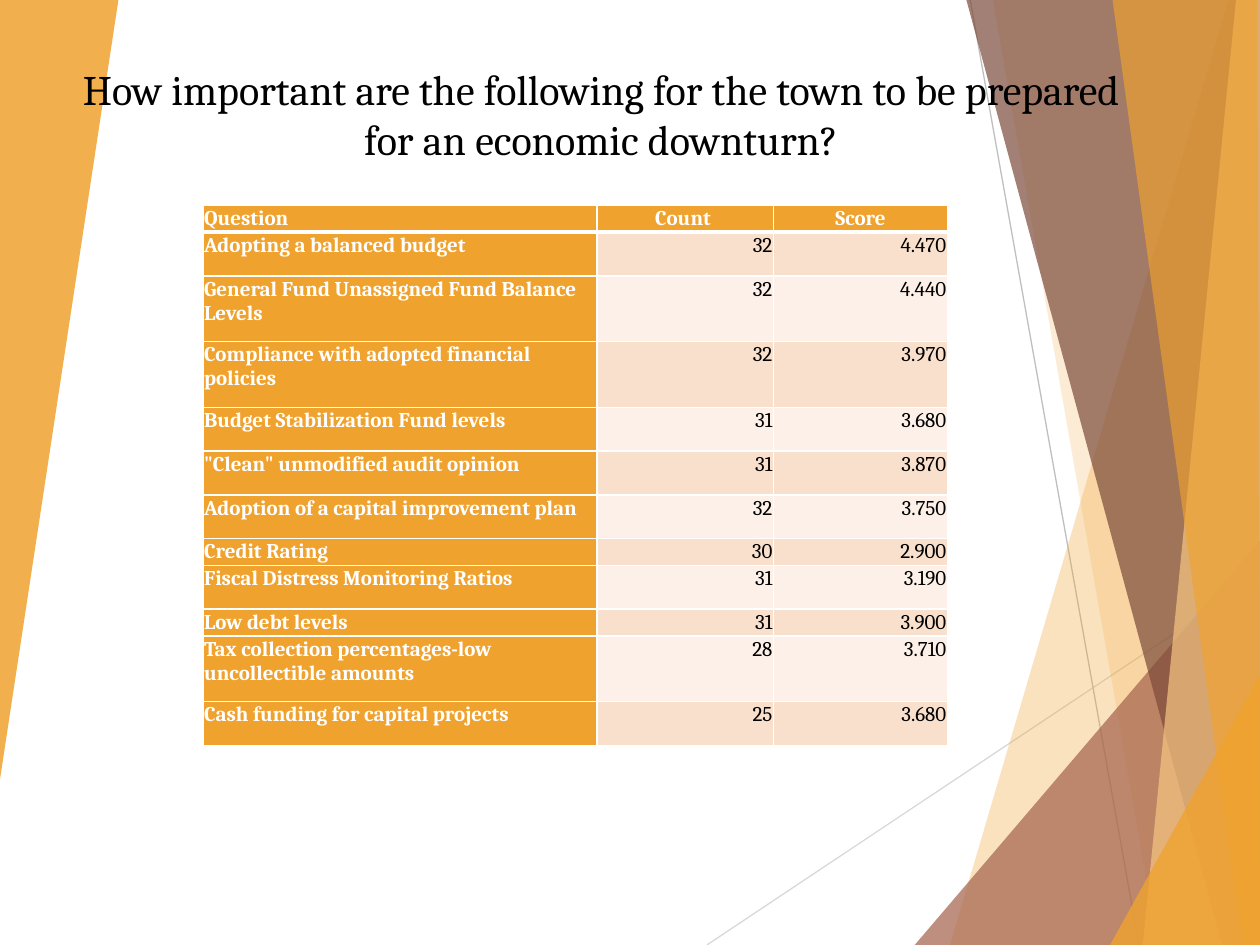
"""Build the survey slide on readiness for an economic downturn."""
import dataclasses
import typing

import lxml.etree
import pptx
import pptx.dml.color
import pptx.enum.shapes
import pptx.enum.text
import pptx.oxml.ns
import pptx.util

Point = typing.Tuple[float, float]
Align = pptx.enum.text.PP_ALIGN
Anchor = pptx.enum.text.MSO_ANCHOR
Kind = pptx.enum.shapes.MSO_SHAPE
WIDE, HIGH = pptx.util.Inches(10), pptx.util.Inches(7.5)
FONT = "Cambria"
TITLE = "How important are the following for the town to be prepared for an economic downturn?"
HEADS = ("Question", "Count ", "Score")
COLS = (31.3, 14, 13.8)
ROW = 2.32
HUES = {
    "gold": "F0A22E", "sand": "F6C782", "rust": "A5644E", "brown": "7C4B3B",
    "peach": "F9E0CD", "cream": "FCF0E8", "white": "FFFFFF", "black": "000000",
    "light": "D9D9D9", "gray": "BFBFBF",
}


@dataclasses.dataclass(frozen=True)
class Ray:
    """A thin line, with ends in percent of the slide."""
    start: Point
    end: Point
    hue: str


@dataclasses.dataclass(frozen=True)
class Shard:
    """A see-through polygon, with points in percent of the slide."""
    hue: str
    alpha: int
    points: typing.Tuple[Point, ...]


@dataclasses.dataclass(frozen=True)
class Item:
    """A table row, with its height in row units."""
    name: str
    count: int
    score: float
    span: int = 2


RAYS = (
    Ray((56.1, 100), (100, 61), "light"),
    Ray((77, 0), (90.4, 100), "gray"),
)
SHARDS = (
    Shard("gold", 30, ((97.5, 0), (75.4, 100), (100, 100), (100, 0))),
    Shard("gold", 20, ((78.8, 0), (91.9, 100), (100, 100), (100, 0))),
    Shard("rust", 72, ((72.6, 100), (100, 57.2), (100, 100))),
    Shard("brown", 70, ((76.7, 0), (97, 100), (100, 100), (100, 0))),
    Shard("sand", 70, ((98.1, 0), (90.7, 100), (100, 100), (100, 0))),
    Shard("gold", 65, ((88.3, 0), (98.6, 100), (100, 100), (99.8, 0))),
    Shard("gold", 80, ((88.1, 100), (100, 71.4), (100, 100))),
    Shard("gold", 85, ((0, 0), (9.4, 0), (0, 82.5))),
)
ITEMS = (
    Item("Adopting a balanced budget", 32, 4.47),
    Item("General Fund Unassigned Fund Balance Levels", 32, 4.44, 3),
    Item("Compliance with adopted financial policies", 32, 3.97, 3),
    Item("Budget Stabilization Fund levels", 31, 3.68),
    Item('"Clean" unmodified audit opinion', 31, 3.87),
    Item("Adoption of a capital improvement plan", 32, 3.75),
    Item("Credit Rating", 30, 2.9, 1),
    Item("Fiscal Distress Monitoring Ratios", 31, 3.19),
    Item("Low debt levels", 31, 3.9, 1),
    Item("Tax collection percentages-low uncollectible amounts", 28, 3.71, 3),
    Item("Cash funding for capital projects", 25, 3.68),
)


def across(share: float) -> int:
    """Turn a percent of the width into a length."""
    return round(WIDE * share / 100)


def down(share: float) -> int:
    """Turn a percent of the height into a length."""
    return round(HIGH * share / 100)


def tint(hue: str) -> pptx.dml.color.RGBColor:
    """Look up a named colour."""
    return pptx.dml.color.RGBColor.from_string(HUES[hue])


def add(node, tag: str, **attrs: str):
    """Append an XML child."""
    return lxml.etree.SubElement(node, pptx.oxml.ns.qn(tag), attrs)


def paint(fill, hue: str) -> None:
    """Give a fill one plain colour."""
    fill.solid()
    fill.fore_color.rgb = tint(hue)


def style(thing, values: typing.Dict[str, typing.Any]) -> None:
    """Set each format value on an object."""
    for key, value in values.items():
        setattr(thing, key, value)


def write(frame, text: str, hue: str, size: int, bold: bool, align) -> None:
    """Write one styled paragraph."""
    para = frame.paragraphs[0]
    para.alignment = align
    run = para.add_run()
    run.text = text
    style(run.font, {"name": FONT, "size": pptx.util.Pt(size), "bold": bold})
    run.font.color.rgb = tint(hue)


def draw_ray(slide, ray: Ray) -> None:
    """Draw a thin line."""
    line = slide.shapes.add_connector(
        pptx.enum.shapes.MSO_CONNECTOR.STRAIGHT,
        across(ray.start[0]), down(ray.start[1]), across(ray.end[0]), down(ray.end[1]))
    line.line.width = pptx.util.Pt(0.75)
    line.line.color.rgb = tint(ray.hue)
    add(line._element.spPr, "a:effectLst")


def draw_shard(slide, shard: Shard) -> None:
    """Draw a see-through polygon."""
    spots = [(across(x), down(y)) for x, y in shard.points]
    pen = slide.shapes.build_freeform(*spots[0])
    pen.add_line_segments(spots[1:], close=True)
    shape = pen.convert_to_shape()
    shape.shadow.inherit = False
    paint(shape.fill, shard.hue)
    shape.line.fill.background()
    color = shape._element.spPr.find(".//" + pptx.oxml.ns.qn("a:srgbClr"))
    add(color, "a:alpha", val=str(shard.alpha * 1000))


def draw_title(slide) -> None:
    """Draw the heading."""
    shape = slide.shapes.add_shape(
        Kind.ROUNDED_RECTANGLE, across(4.3), down(2.8), across(86.8), down(18.53))
    shape.shadow.inherit = False
    shape.fill.background()
    shape.line.fill.background()
    style(shape.text_frame, {"word_wrap": True, "vertical_anchor": Anchor.MIDDLE})
    write(shape.text_frame, TITLE, "black", 24, False, Align.CENTER)


def edge(cell, row: int) -> None:
    """Draw white borders, thick below the header."""
    props = cell._tc.get_or_add_tcPr()
    thick = {"T": row == 1, "B": row == 0}
    for side in "LRTB":
        width = pptx.util.Pt(3 if thick.get(side) else 1)
        line = add(props, "a:ln" + side, w=str(width))
        add(add(line, "a:solidFill"), "a:srgbClr", val=HUES["white"])


def draw_table(slide) -> None:
    """Draw the survey results."""
    spans = [1] + [item.span for item in ITEMS]
    rows = [HEADS] + [(i.name, str(i.count), f"{i.score:.3f}") for i in ITEMS]
    table = slide.shapes.add_table(
        len(rows), len(COLS), across(16.1), down(21.73),
        across(sum(COLS)), down(ROW * sum(spans))).table
    for col, share in zip(table.columns, COLS):
        col.width = across(share)
    pad = pptx.util.Inches(0.01)
    sides = ("margin_left", "margin_right", "margin_top", "margin_bottom")
    for r, (texts, span) in enumerate(zip(rows, spans)):
        table.rows[r].height = down(ROW * span)
        for c, text in enumerate(texts):
            cell = table.cell(r, c)
            label = r == 0 or c == 0
            style(cell, dict.fromkeys(sides, pad))
            cell.vertical_anchor = Anchor.TOP if r else Anchor.MIDDLE
            edge(cell, r)
            paint(cell.fill, "gold" if label else "peach" if r % 2 else "cream")
            align = Align.LEFT if c == 0 else Align.RIGHT if r else Align.CENTER
            write(cell.text_frame, text, "white" if label else "black", 12, label, align)


def main() -> None:
    """Build and save the slide."""
    deck = pptx.Presentation()
    style(deck, {"slide_width": WIDE, "slide_height": HIGH})
    slide = deck.slides.add_slide(deck.slide_layouts[6])
    for ray in RAYS:
        draw_ray(slide, ray)
    for shard in SHARDS:
        draw_shard(slide, shard)
    draw_title(slide)
    draw_table(slide)
    deck.save("out.pptx")


if __name__ == "__main__":
    main()
